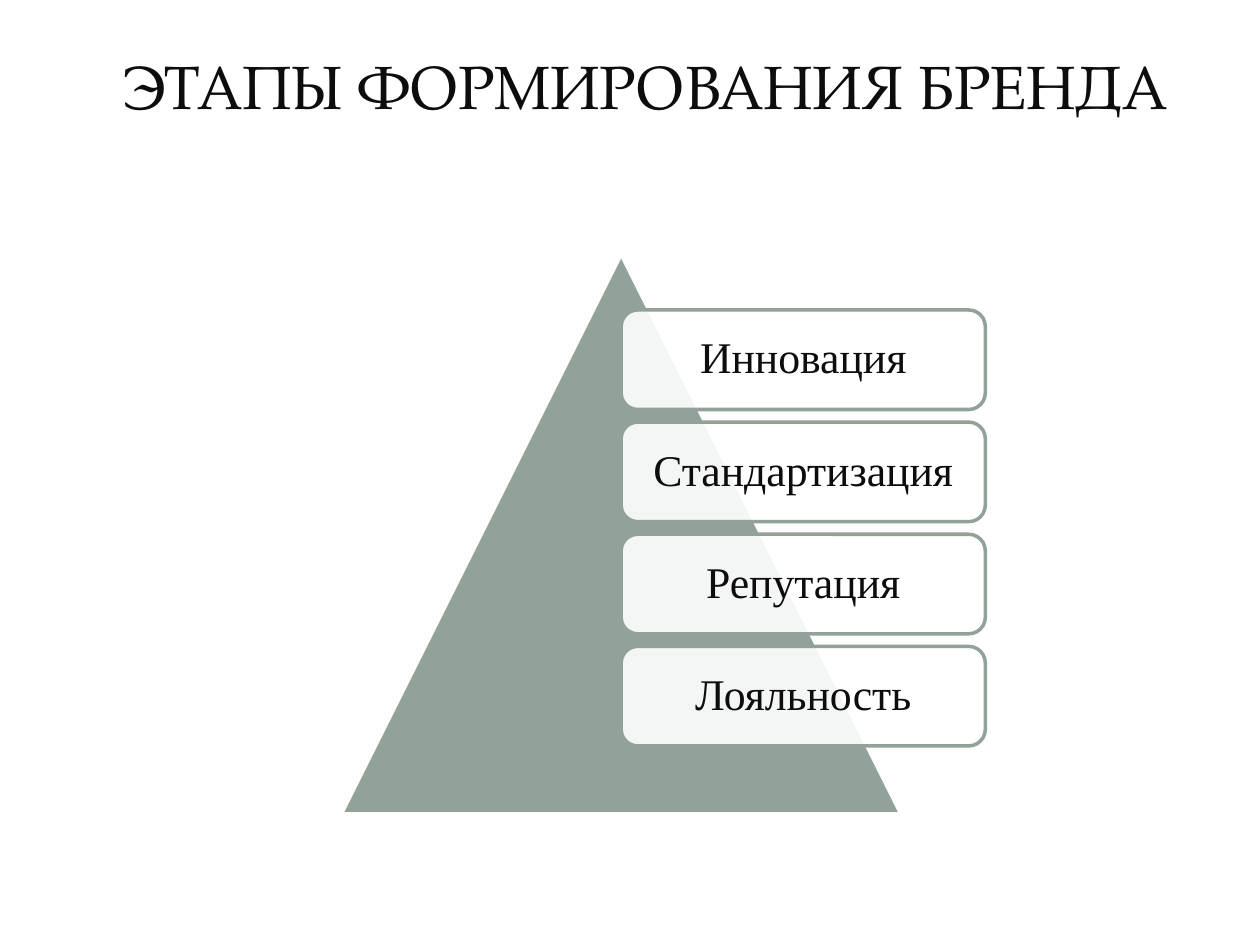
"""Build a slide with the stages of brand formation on a pyramid."""
from lxml import etree
from pptx import Presentation
from pptx import util as u
from pptx.dml.color import RGBColor
from pptx.enum import shapes, text
from pptx.oxml.ns import qn

COLORS = {"text": "0D0D0D", "sage": "93A299", "white": "FFFFFF"}
STAGES = ["Инновация", "Стандартизация", "Репутация", "Лояльность"]


def paint(shape, fill, line):
    shape.shadow.inherit = False
    shape.fill.solid()
    shape.fill.fore_color.rgb = RGBColor.from_string(COLORS[fill])
    shape.line.color.rgb = RGBColor.from_string(COLORS[line])
    shape.line.width = u.Pt(2)


def write(shape, words, font, size):
    shape.text_frame.text = words
    shape.text_frame.word_wrap = True
    para = shape.text_frame.paragraphs[0]
    para.alignment = text.PP_ALIGN.CENTER
    span = para.runs[0]
    span.font.name = font
    span.font.size = u.Pt(size)
    span.font.color.rgb = RGBColor.from_string(COLORS["text"])


deck = Presentation()
deck.slide_width, deck.slide_height = u.Inches(10), u.Inches(7.5)
page = deck.slides.add_slide(deck.slide_layouts[5])

title = page.shapes.title
title.left, title.top = u.Inches(0.83), u.Inches(0.33)
title.width, title.height = u.Inches(8.58), u.Inches(1.28)
write(title, "ЭТАПЫ ФОРМИРОВАНИЯ БРЕНДА", "TeX Gyre Pagella", 35)
title.text_frame.vertical_anchor = text.MSO_ANCHOR.TOP
title.text_frame.auto_size = text.MSO_AUTO_SIZE.NONE

pyramid = page.shapes.add_shape(
    shapes.MSO_SHAPE.ISOSCELES_TRIANGLE,
    u.Inches(2.71), u.Inches(2.02), u.Inches(4.44), u.Inches(4.44))
paint(pyramid, "sage", "white")

for row, stage in enumerate(STAGES):
    box = page.shapes.add_shape(
        shapes.MSO_SHAPE.ROUNDED_RECTANGLE,
        u.Inches(4.93), u.Inches(2.46 + 0.89 * row), u.Inches(2.89), u.Inches(0.79))
    paint(box, "white", "sage")
    color = box.fill._xPr.find(qn("a:solidFill"))[0]
    etree.SubElement(color, qn("a:alpha")).set("val", "90000")
    write(box, stage, "Times New Roman", 25)
    frame = box.text_frame
    frame.vertical_anchor = text.MSO_ANCHOR.MIDDLE
    frame.margin_left = frame.margin_right = u.Inches(0.1)
    frame.margin_top = frame.margin_bottom = u.Inches(0.1)
    frame.paragraphs[0].line_spacing = 0.9

deck.save("out.pptx")
